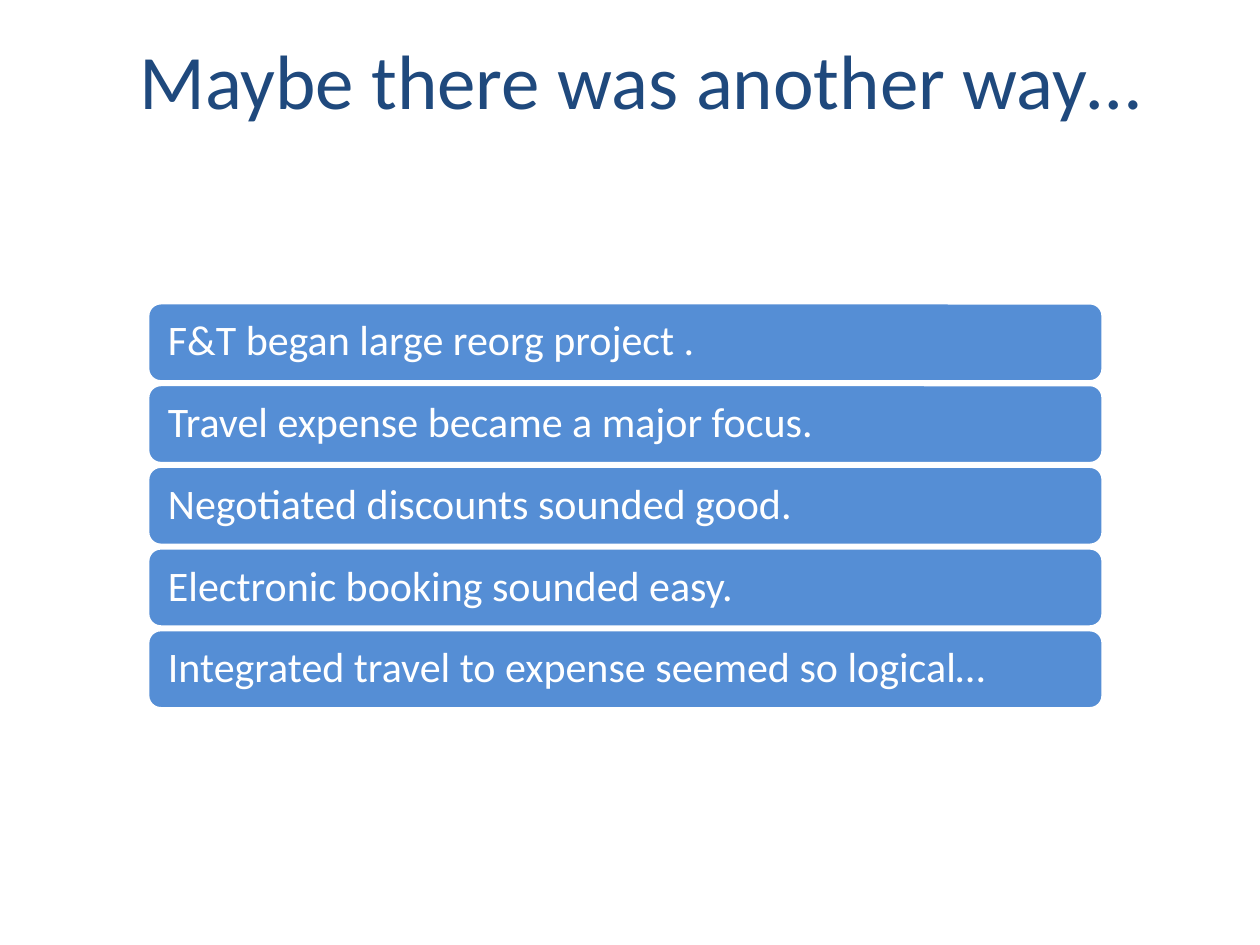
from pptx import Presentation
from pptx.dml.color import RGBColor
from pptx.enum.shapes import MSO_SHAPE as SHAPE
from pptx.enum.text import MSO_ANCHOR as ANCHOR, PP_ALIGN as ALIGN
from pptx.util import Pt

TITLE = "Maybe there was another way…"
STEPS = [
    "F&T began large reorg project .",
    "Travel expense became a major focus.",
    "Negotiated discounts sounded good.",
    "Electronic booking sounded easy.",
    "Integrated travel to expense seemed so logical…",
]

NAVY = RGBColor(0x1F, 0x49, 0x7D)
BLUE = RGBColor(0x55, 0x8E, 0xD5)
WHITE = RGBColor(0xFF, 0xFF, 0xFF)
FONT = "Calibri"

BAR_LEFT, BAR_TOP, BAR_WIDTH, BAR_HEIGHT = 84.4, 173, 546, 45.2
BAR_PITCH = 46.7
BAR_INSET = 9.4


def write(sp, text, size, color, align):
    tf = sp.text_frame
    tf.text = text
    tf.word_wrap = True
    tf.vertical_anchor = ANCHOR.MIDDLE
    p = tf.paragraphs[0]
    p.alignment = align
    font = p.runs[0].font
    font.name, font.size = FONT, Pt(size)
    font.color.rgb = color
    return p


def add_bar(s, index, text):
    sp = s.shapes.add_shape(
        SHAPE.ROUNDED_RECTANGLE, Pt(BAR_LEFT), Pt(BAR_TOP + index * BAR_PITCH),
        Pt(BAR_WIDTH), Pt(BAR_HEIGHT))
    sp.shadow.inherit = False
    sp.fill.solid()
    sp.fill.fore_color.rgb = BLUE
    sp.line.color.rgb = WHITE
    sp.line.width = Pt(2)
    tf = sp.text_frame
    tf.margin_left = tf.margin_right = Pt(BAR_INSET)
    write(sp, text, 24, WHITE, ALIGN.LEFT).line_spacing = 0.9


prs = Presentation()
prs.slide_width, prs.slide_height = Pt(720), Pt(540)
s = prs.slides.add_slide(prs.slide_layouts[5])

title = s.shapes.title
title.left, title.top, title.width, title.height = Pt(42), Pt(12), Pt(648), Pt(66)
write(title, TITLE, 44, NAVY, ALIGN.CENTER)

for index, step in enumerate(STEPS):
    add_bar(s, index, step)

prs.save("out.pptx")
